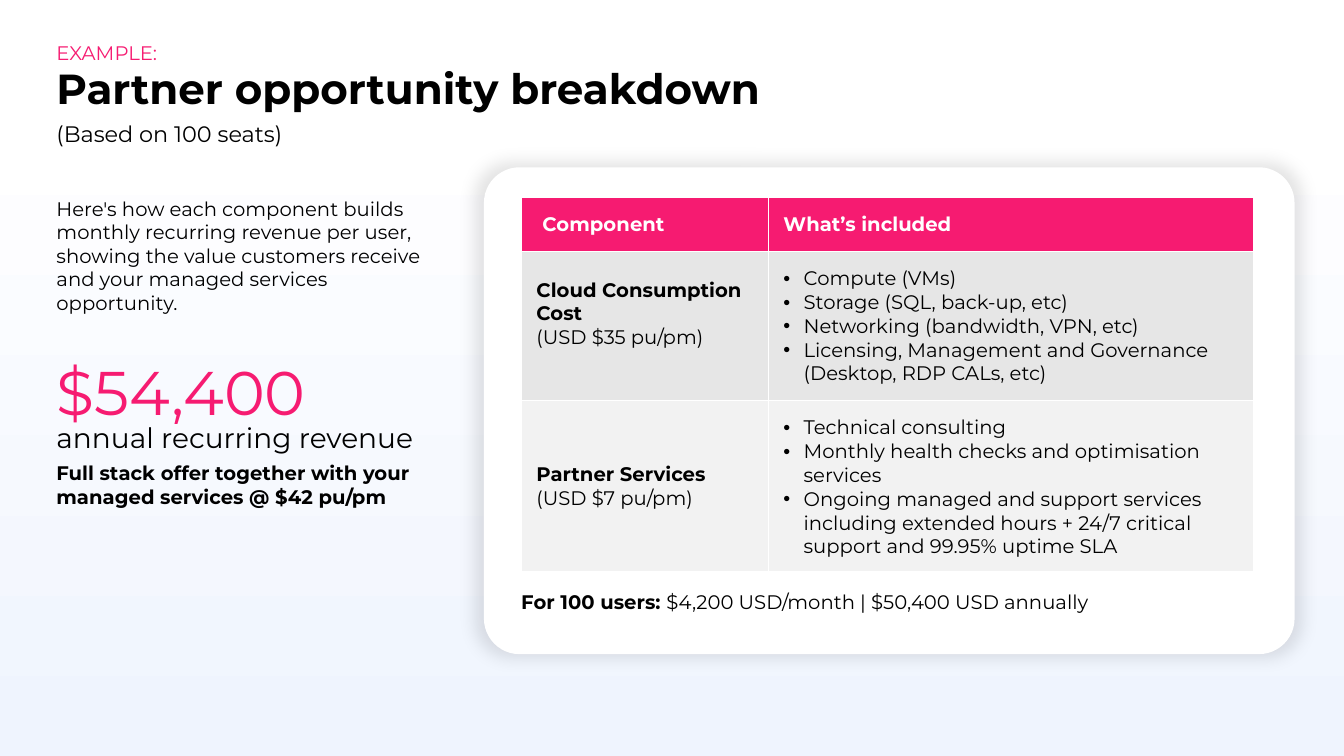
from lxml import etree
from pptx import Presentation
from pptx import util as u
from pptx.dml.color import RGBColor
from pptx.enum import shapes, text
from pptx.oxml import ns

PINK = RGBColor(0xF6, 0x1B, 0x71)
BLACK = RGBColor(0, 0, 0)
WHITE = RGBColor(0xFF, 0xFF, 0xFF)
PALE_BLUE = RGBColor(0xEF, 0xF4, 0xFE)
GREY = RGBColor(0xE6, 0xE6, 0xE6)
LIGHT_GREY = RGBColor(0xF2, 0xF2, 0xF2)
FONT = "Montserrat"

WIDTH, HEIGHT = 13.33, 7.5
LEFT = 0.56
TABLE_LEFT, TABLE_TOP = 5.17, 1.96
COLUMNS = (2.45, 4.81)
ROWS = (0.53, 1.48, 1.69)
PADDING = 0.15
LINE = 0.24

TITLE = "Partner opportunity breakdown"
NOTES = [
    ((LEFT, 1.19, 5.59, 0.35), [("(Based on 100 seats)", 16, BLACK, False, None, 0)]),
    ((LEFT, 1.95, 3.62, 1.18), [(
        "Here's how each component builds monthly recurring revenue per user, "
        "showing the value customers receive and your managed services opportunity.",
        14, BLACK, False, None, 0)]),
    ((LEFT, 3.65, 3.83, 1.4), [
        ("$54,400", 44, PINK, False, 0.8, 0),
        ("annual recurring revenue", 20, BLACK, False, 0.8, 0),
        ("Full stack offer together with your managed services @ $42 pu/pm",
         14, BLACK, True, None, 5)]),
    ((LEFT, 0.41, 6.67, LINE), [("EXAMPLE:", 14, PINK, False, None, 0)]),
]
HEADINGS = ("Component", "What’s included")
COMPONENTS = [
    ("Cloud Consumption Cost", "(USD $35 pu/pm)", GREY, LINE, [
        "Compute (VMs)",
        "Storage (SQL, back-up, etc)",
        "Networking (bandwidth, VPN, etc)",
        "Licensing, Management and Governance\v(Desktop, RDP CALs, etc)"]),
    ("Partner Services", "(USD $7 pu/pm)", LIGHT_GREY, 0, [
        "Technical consulting",
        "Monthly health checks and optimisation services",
        "Ongoing managed and support services including extended hours "
        "+ 24/7 critical support and 99.95% uptime SLA"]),
]
TOTAL = ("For 100 users: ", "$4,200 USD/month | $50,400 USD annually")


def style(run, size, color, bold):
    run.font.name = FONT
    run.font.size = u.Pt(size)
    run.font.color.rgb = color
    run.font.bold = bold


def write(paragraph, words, size=14, color=BLACK, bold=False):
    paragraph.text = words
    paragraph.alignment = text.PP_ALIGN.LEFT
    for run in paragraph.runs:
        style(run, size, color, bold)


def paragraphs(frame, count):
    return [frame.paragraphs[0]] + [frame.add_paragraph() for _ in range(count - 1)]


def inches(box):
    return [u.Inches(length) for length in box]


def clear_margins(frame):
    frame.word_wrap = True
    frame.margin_left = frame.margin_right = frame.margin_top = frame.margin_bottom = 0


def add_note(slide, box):
    frame = slide.shapes.add_textbox(*inches(box)).text_frame
    clear_margins(frame)
    return frame


def add_panel(slide, kind, box):
    panel = slide.shapes.add_shape(kind, *inches(box))
    panel.shadow.inherit = False
    panel.line.fill.background()
    return panel


def add_glow(panel):
    effects = panel._element.spPr.find(ns.qn("a:effectLst"))
    glow = etree.SubElement(effects, ns.qn("a:outerShdw"), blurRad=str(u.Pt(12)),
                            sx="102000", sy="102000", algn="ctr", rotWithShape="0")
    black = etree.SubElement(glow, ns.qn("a:srgbClr"), val=str(BLACK))
    etree.SubElement(black, ns.qn("a:alpha"), val="11000")


def indent(paragraph, margin, first):
    properties = paragraph._p.get_or_add_pPr()
    properties.set("marL", str(u.Inches(margin)))
    properties.set("indent", str(u.Inches(first)))
    return properties


def add_bullet(paragraph):
    properties = indent(paragraph, 0.2, -0.2)
    etree.SubElement(properties, ns.qn("a:buFont"), typeface="Arial")
    etree.SubElement(properties, ns.qn("a:buChar"), char="•")
    tabs = etree.SubElement(properties, ns.qn("a:tabLst"))
    etree.SubElement(tabs, ns.qn("a:tab"), pos=str(u.Inches(0.5)), algn="l")


def prepare_cell(cell, color, extra_bottom=0):
    cell.fill.solid()
    cell.fill.fore_color.rgb = color
    cell.vertical_anchor = text.MSO_ANCHOR.MIDDLE
    cell.margin_left = cell.margin_right = cell.margin_top = u.Inches(PADDING)
    cell.margin_bottom = u.Inches(PADDING + extra_bottom)
    properties = cell._tc.get_or_add_tcPr()
    for place, side in enumerate(("lnL", "lnR", "lnT", "lnB")):
        border = etree.Element(ns.qn("a:" + side), w=str(u.Pt(1)))
        solid = etree.SubElement(border, ns.qn("a:solidFill"))
        etree.SubElement(solid, ns.qn("a:srgbClr"), val=str(WHITE))
        properties.insert(place, border)


def add_components(slide):
    box = (TABLE_LEFT, TABLE_TOP, sum(COLUMNS), sum(ROWS))
    table = slide.shapes.add_table(len(ROWS), len(COLUMNS), *inches(box)).table
    table.horz_banding = False
    for column, width in zip(table.columns, COLUMNS):
        column.width = u.Inches(width)
    for row, height in zip(table.rows, ROWS):
        row.height = u.Inches(height)
    for column, heading in enumerate(HEADINGS):
        cell = table.cell(0, column)
        prepare_cell(cell, PINK)
        write(cell.text_frame.paragraphs[0], heading, color=WHITE, bold=True)
    indent(table.cell(0, 0).text_frame.paragraphs[0], 0, 0.06)
    for row, (name, price, color, lift, included) in enumerate(COMPONENTS, 1):
        component, contents = table.cell(row, 0), table.cell(row, 1)
        prepare_cell(component, color, lift)
        prepare_cell(contents, color)
        name_line, price_line = paragraphs(component.text_frame, 2)
        write(name_line, name, bold=True)
        write(price_line, price)
        for paragraph, item in zip(paragraphs(contents.text_frame, len(included)), included):
            add_bullet(paragraph)
            write(paragraph, item)


def main():
    deck = Presentation()
    deck.slide_width, deck.slide_height = u.Inches(WIDTH), u.Inches(HEIGHT)
    slide = deck.slides.add_slide(deck.slide_layouts[5])

    backdrop = add_panel(slide, shapes.MSO_SHAPE.RECTANGLE, (0, 1.14, WIDTH, HEIGHT - 1.14))
    backdrop.fill.gradient()
    backdrop.fill.gradient_angle = 270
    for stop, color in zip(backdrop.fill.gradient_stops, (WHITE, PALE_BLUE)):
        stop.color.rgb = color

    card = add_panel(slide, shapes.MSO_SHAPE.ROUNDED_RECTANGLE, (4.8, 1.66, 8.04, 4.83))
    card.adjustments[0] = 0.073
    card.fill.solid()
    card.fill.fore_color.rgb = WHITE
    add_glow(card)

    title = slide.shapes.title
    card._element.addnext(title._element)
    title.left, title.top, title.width, title.height = inches((LEFT, 0.56, 11.47, 0.98))
    clear_margins(title.text_frame)
    title.text_frame.margin_bottom = u.Pt(30)
    title.text_frame.vertical_anchor = text.MSO_ANCHOR.BOTTOM
    heading = title.text_frame.paragraphs[0]
    write(heading, TITLE, 30, bold=True)
    heading.line_spacing = u.Pt(30)

    for box, lines in NOTES:
        frame = add_note(slide, box)
        for paragraph, line in zip(paragraphs(frame, len(lines)), lines):
            words, size, color, bold, spacing, before = line
            write(paragraph, words, size, color, bold)
            paragraph.line_spacing = spacing
            if before:
                paragraph.space_before = u.Pt(before)

    add_components(slide)

    total = add_note(slide, (TABLE_LEFT, 5.85, 6.33, LINE))
    total.vertical_anchor = text.MSO_ANCHOR.MIDDLE
    label, amount = TOTAL
    write(total.paragraphs[0], label, bold=True)
    amount_run = total.paragraphs[0].add_run()
    amount_run.text = amount
    style(amount_run, 14, BLACK, False)

    deck.save("out.pptx")


if __name__ == "__main__":
    main()
